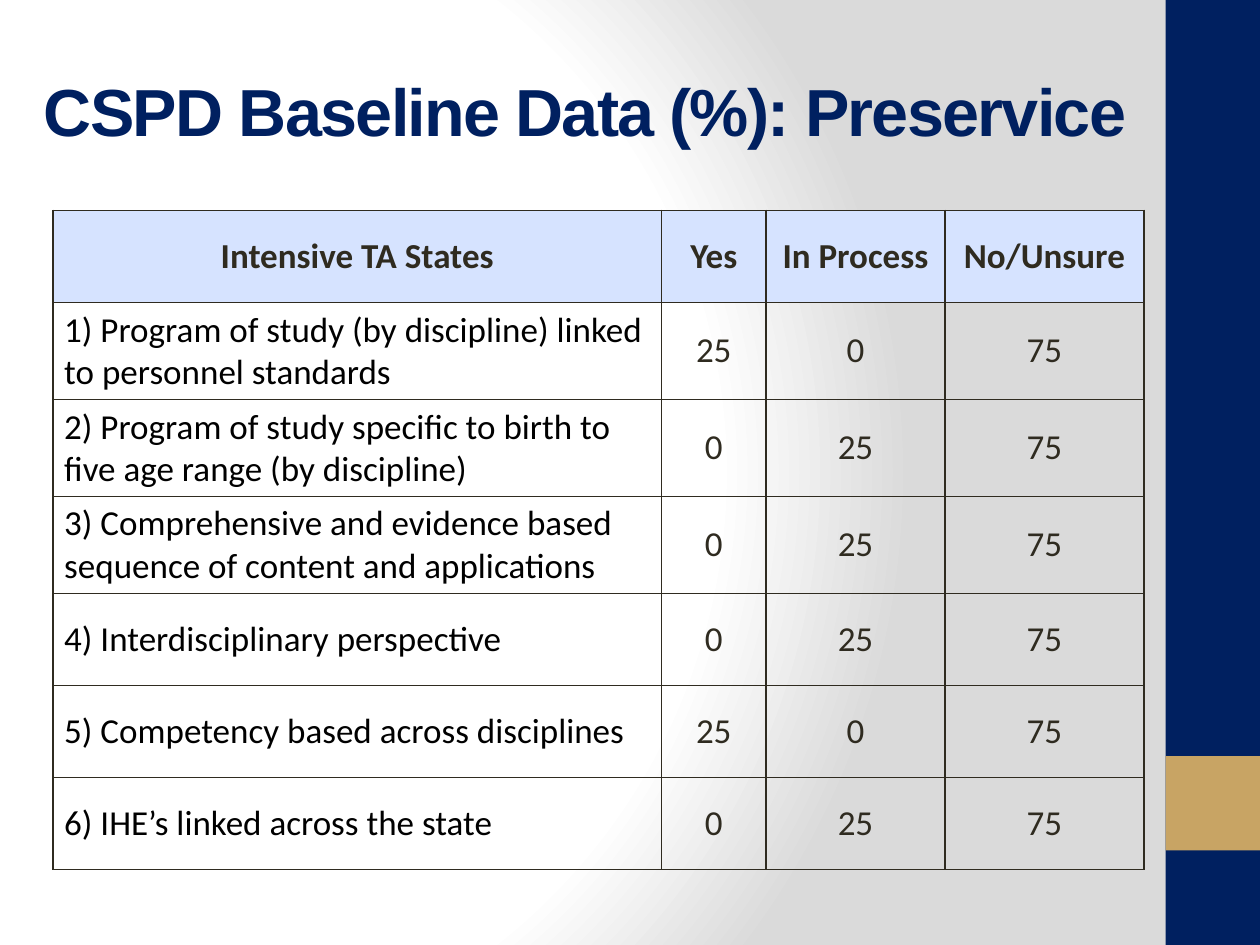
import pptx
import pptx.dml.color
import pptx.enum.shapes
import pptx.enum.text
import pptx.oxml
import pptx.oxml.ns
import pptx.util

Inches = pptx.util.Inches
RGBColor = pptx.dml.color.RGBColor
ALIGN = pptx.enum.text.PP_ALIGN
MIDDLE = pptx.enum.text.MSO_ANCHOR.MIDDLE

NAVY = RGBColor(0x00, 0x20, 0x60)
GOLD = RGBColor(0xC8, 0xA4, 0x64)
PALE_BLUE = RGBColor(0xD6, 0xE3, 0xFF)
BROWN = RGBColor(0x2F, 0x2B, 0x20)
BLACK = RGBColor(0x00, 0x00, 0x00)
WHITE = RGBColor(0xFF, 0xFF, 0xFF)
GRAY = RGBColor(0xDA, 0xDA, 0xDA)

COLUMN_WIDTHS = [4.83, 0.83, 1.42, 1.58]
ROW_HEIGHTS = [0.73] + [0.77] * 3 + [0.73] * 3
HEADINGS = ["Intensive TA States", "Yes", "In Process", "No/Unsure"]
INDICATORS = [
    ("1) Program of study (by discipline) linked to personnel standards", 25, 0, 75),
    ("2) Program of study specific to birth to five age range (by discipline)", 0, 25, 75),
    ("3) Comprehensive and evidence based sequence of content and applications", 0, 25, 75),
    ("4) Interdisciplinary perspective", 0, 25, 75),
    ("5) Competency based across disciplines", 25, 0, 75),
    ("6) IHE’s linked across the state", 0, 25, 75),
]


def paint_background(slide):
    slide.background.fill.gradient()
    default = slide.element.find(".//" + pptx.oxml.ns.qn("a:gradFill"))
    stops = "".join(
        f'<a:gs pos="{percent * 1000}"><a:srgbClr val="{color}"/></a:gs>'
        for percent, color in [(0, WHITE), (75, WHITE), (100, GRAY)]
    )
    glow = pptx.oxml.parse_xml(
        f'<a:gradFill {pptx.oxml.ns.nsdecls("a")} rotWithShape="1"><a:gsLst>{stops}</a:gsLst>'
        '<a:path path="circle"><a:fillToRect l="20000" t="50000" r="100000" b="50000"/></a:path>'
        "</a:gradFill>"
    )
    default.getparent().replace(default, glow)


def add_band(slide, top, height, color):
    band = slide.shapes.add_shape(
        pptx.enum.shapes.MSO_SHAPE.RECTANGLE,
        Inches(9.25), Inches(top), Inches(0.75), Inches(height),
    )
    band.shadow.inherit = False
    band.fill.solid()
    band.fill.fore_color.rgb = color
    band.line.fill.background()


def write_text(frame, text, *, size=20, font="Calibri", color=BROWN, bold=False,
               align=ALIGN.CENTER, indent=0, spacing=0):
    paragraph = frame.paragraphs[0]
    paragraph.alignment = align
    if indent:
        paragraph._p.get_or_add_pPr().set("marL", str(Inches(indent)))
    run = paragraph.add_run()
    run.text = text
    run.font.size = pptx.util.Pt(size)
    run.font.name = font
    run.font.color.rgb = color
    run.font.bold = bold
    if spacing:
        run.font._element.set("spc", str(spacing * 100))


def add_title(slide, text):
    title = slide.shapes.add_textbox(Inches(0.25), Inches(0.25), Inches(8.92), Inches(1.25))
    title.text_frame.word_wrap = True
    title.text_frame.vertical_anchor = MIDDLE
    write_text(title.text_frame, text, size=38, font="Arial", color=NAVY,
               bold=True, align=ALIGN.LEFT, spacing=-1)


def outline_cell(cell):
    properties = cell._tc.get_or_add_tcPr()
    for position, side in enumerate(["lnL", "lnR", "lnT", "lnB"]):
        border = pptx.oxml.parse_xml(
            f'<a:{side} {pptx.oxml.ns.nsdecls("a")} w="{pptx.util.Pt(1)}">'
            f'<a:solidFill><a:srgbClr val="{BROWN}"/></a:solidFill></a:{side}>'
        )
        properties.insert(position, border)


def fill_cell(cell, text, *, fill=None, **text_format):
    cell.vertical_anchor = MIDDLE
    if fill is None:
        cell.fill.background()
    else:
        cell.fill.solid()
        cell.fill.fore_color.rgb = fill
    outline_cell(cell)
    write_text(cell.text_frame, text, **text_format)


def add_baseline_table(slide):
    table = slide.shapes.add_table(
        len(ROW_HEIGHTS), len(COLUMN_WIDTHS),
        Inches(0.42), Inches(1.67), Inches(8.67), Inches(5.25),
    ).table
    for column, width in zip(table.columns, COLUMN_WIDTHS):
        column.width = Inches(width)
    for row, height in zip(table.rows, ROW_HEIGHTS):
        row.height = Inches(height)
    for column, heading in enumerate(HEADINGS):
        fill_cell(table.cell(0, column), heading, fill=PALE_BLUE, bold=True)
    for row, (indicator, *percentages) in enumerate(INDICATORS, start=1):
        label = table.cell(row, 0)
        label.margin_left = label.margin_top = label.margin_right = Inches(0.01)
        label.margin_bottom = 0
        fill_cell(label, indicator, color=BLACK, align=ALIGN.LEFT, indent=0.08)
        for column, percentage in enumerate(percentages, start=1):
            fill_cell(table.cell(row, column), str(percentage))


def main():
    deck = pptx.Presentation()
    deck.slide_width = Inches(10)
    deck.slide_height = Inches(7.5)
    slide = deck.slides.add_slide(deck.slide_layouts[6])
    paint_background(slide)
    add_band(slide, 0, 7.5, NAVY)
    add_band(slide, 6, 0.75, GOLD)
    add_title(slide, "CSPD Baseline Data (%): Preservice")
    add_baseline_table(slide)
    deck.save("out.pptx")


if __name__ == "__main__":
    main()
